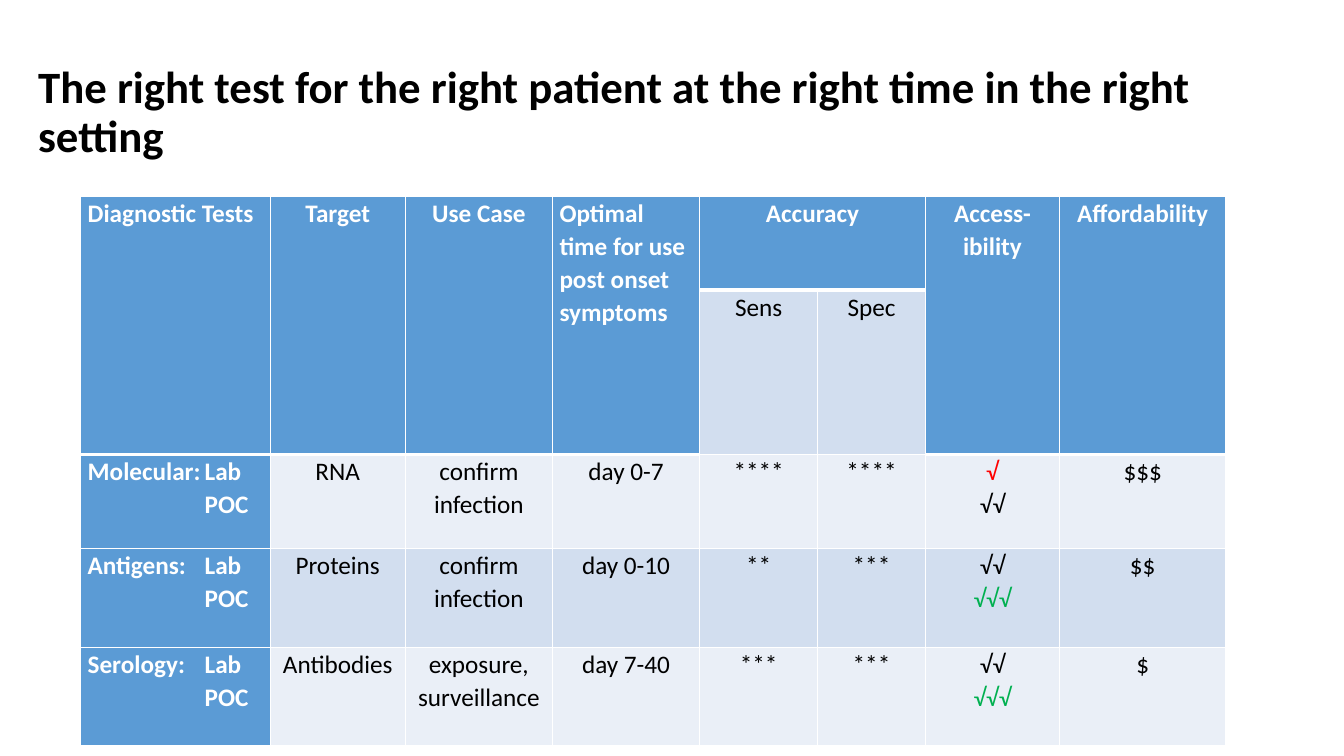
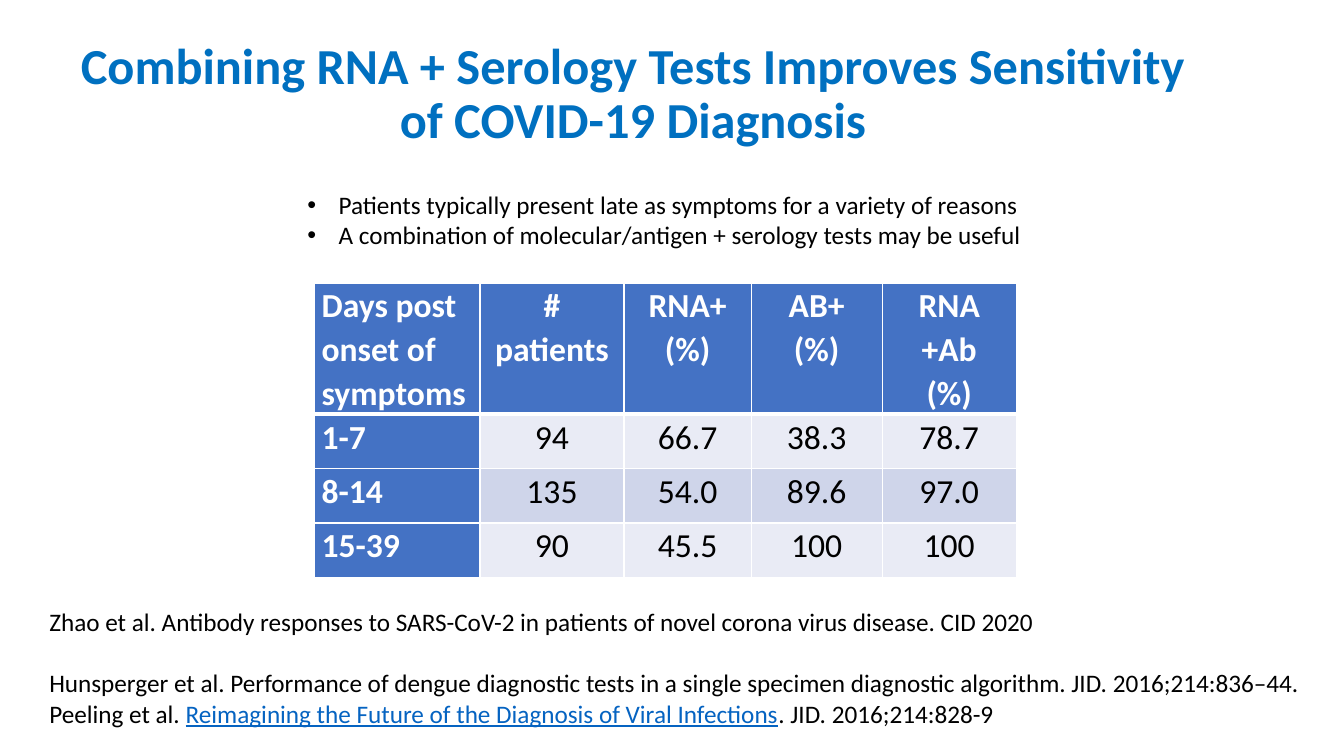
import pptx
import pptx.util
import pptx.dml.color
import pptx.enum.text
import pptx.oxml.ns
import lxml.etree

Inches = pptx.util.Inches
Pt = pptx.util.Pt
ALIGN = pptx.enum.text.PP_ALIGN
FONT = "Calibri"
HUE = {"black": "000000", "white": "FFFFFF", "title": "0070C0", "link": "0563C1",
       "red": "FF0000", "green": "00B050"}
SKY = {"head": "5B9BD5", "bands": ("D2DEEF", "EAEFF7")}
NAVY = {"head": "4472C4", "bands": ("E9EBF5", "CFD5EA")}
MARKS = {"√": "red", "√√√": "green"}

TESTS = [
    ["Diagnostic Tests", "Target", "Use Case", "Optimal time for use\npost onset symptoms",
     "Accuracy", "", "Access-\nibility", "Affordability"],
    ["", "", "", "", "Sens", "Spec", "", ""],
    ["Molecular:\tLab\n\tPOC", "RNA", "confirm\ninfection", "day 0-7",
     "****", "****", "√\n√√", "$$$"],
    ["Antigens:\tLab\n\tPOC", "Proteins", "confirm infection", "day 0-10",
     "**", "***", "√√\n√√√", "$$"],
    ["Serology:\tLab\n\tPOC", "Antibodies", "exposure,\nsurveillance", "day 7-40",
     "***", "***", "√√\n√√√", "$"],
]
SPANS = [(0, col, 1, col) for col in (0, 1, 2, 3, 6, 7)] + [(0, 4, 0, 5)]
DAYS = [
    ["Days post onset of symptoms", "# patients", "RNA+ (%)", "AB+\n(%)", "RNA +Ab\n(%)"],
    ["1-7", "94", "66.7", "38.3", "78.7"],
    ["8-14", "135", "54.0", "89.6", "97.0"],
    ["15-39", "90", "45.5", "100", "100"],
]
NOTES = ["Patients typically present late as symptoms for a variety of reasons",
         "A combination of molecular/antigen + serology tests may be useful"]
CITES = [
    "Zhao et al. Antibody responses to SARS-CoV-2 in patients of novel corona virus disease. CID 2020",
    "Hunsperger et al. Performance of dengue diagnostic tests in a single specimen "
    "diagnostic algorithm. JID. 2016;214:836–44.",
    "Peeling et al. ",
]
LINK = "Reimagining the Future of the Diagnosis of Viral Infections"


def rgb(code):
    """Turn a hex string into a colour."""
    return pptx.dml.color.RGBColor.from_string(code)


def node(top, tag, **attrs):
    """Append a drawing element to a parent."""
    return lxml.etree.SubElement(top, pptx.oxml.ns.qn("a:" + tag), attrs)


def style(para, size, hue="black", bold=False, align=ALIGN.LEFT, space=None):
    """Set the font and layout of a paragraph."""
    para.alignment = align
    if space:
        para.line_spacing = space
    font = para.font
    font.name, font.size, font.bold = FONT, Pt(size), bold
    font.color.rgb = rgb(HUE[hue])


def write(slide, box, text):
    """Add a wrapped text box and return its frame."""
    frame = slide.shapes.add_textbox(*map(Inches, box)).text_frame
    frame.word_wrap = True
    frame.text = text
    return frame


def title(slide, box, text, size, hue, align):
    """Add the slide title."""
    frame = write(slide, box, text)
    frame.vertical_anchor = pptx.enum.text.MSO_ANCHOR.MIDDLE
    style(frame.paragraphs[0], size, hue, True, align, 0.9)


def edge(cell, widths):
    """Draw white borders with the given widths in points."""
    props = cell._tc.get_or_add_tcPr()
    for side, width in widths.items():
        line = node(props, "ln" + side, w=str(Pt(width)))
        node(node(line, "solidFill"), "srgbClr", val=HUE["white"])


def fill(cell, text, size, hue, bold, align, tab):
    """Put styled text into a table cell."""
    cell.margin_left = cell.margin_right = Inches(0.07)
    cell.margin_top = cell.margin_bottom = 0
    cell.text = text
    for para in cell.text_frame.paragraphs:
        if "\t" in para.text:
            stops = node(para._p.get_or_add_pPr(), "tabLst")
            node(stops, "tab", pos=str(Inches(tab)), algn="l")
        style(para, size, MARKS.get(para.text, hue), bold, align, 1.07)


def grid(slide, spot, cols, rows, data, look, size, spans=(), left=(0,), tab=1.16):
    """Add a table with a dark head and first column over banded rows."""
    box = (*spot, sum(cols), sum(rows))
    table = slide.shapes.add_table(len(rows), len(cols), *map(Inches, box)).table
    table.first_row = table.horz_banding = False
    for col, width in zip(table.columns, cols):
        col.width = Inches(width)
    for row, height in zip(table.rows, rows):
        row.height = Inches(height)
    for top, start, end, stop in spans:
        table.cell(top, start).merge(table.cell(end, stop))
    above = [False] * len(cols)
    for r, line in enumerate(data):
        for c, text in enumerate(line):
            cell = table.cell(r, c)
            head = r == 0 or cell.is_spanned
            dark = head or c == 0
            edge(cell, {"L": 1, "R": 1, "T": 3 if above[c] else 1, "B": 3 if head else 1})
            cell.fill.solid()
            cell.fill.fore_color.rgb = rgb(look["head"] if dark else look["bands"][(r + 1) % 2])
            side = ALIGN.LEFT if c == 0 or (head and c in left) else ALIGN.CENTER
            fill(cell, text, size, "white" if dark else "black", dark, side, tab)
            above[c] = head


def notes(slide, box):
    """Add the bulleted notes."""
    frame = write(slide, box, "\n".join(NOTES))
    for para in frame.paragraphs:
        props = para._p.get_or_add_pPr()
        props.set("marL", str(Inches(0.31)))
        props.set("indent", str(-Inches(0.31)))
        node(props, "buFont", typeface="Arial")
        node(props, "buChar", char="•")
        style(para, 18)


def cites(slide, box):
    """Add the list of references."""
    paras = write(slide, box, "\n".join(CITES)).paragraphs
    for para in paras:
        style(para, 18)
    paras[1].space_before = Pt(22)
    link = paras[2].add_run()
    link.text = LINK
    link.font.underline = True
    link.font.color.rgb = rgb(HUE["link"])
    paras[2].add_run().text = ". JID. 2016;214:828-9"


def choice(slide):
    """Build the slide that compares the tests."""
    title(slide, (0.28, 0.4, 12.9, 1.45),
          "The right test for the right patient at the right time in the right setting",
          32, "black", ALIGN.LEFT)
    grid(slide, (0.8, 1.95), (1.88, 1.34, 1.46, 1.46, 1.17, 1.07, 1.33, 1.65),
         (0.93, 1.63, 0.93, 0.98, 0.98), TESTS, SKY, 18, SPANS, (0, 3))


def gain(slide):
    """Build the slide on combined tests."""
    title(slide, (0.53, 0.22, 11.5, 1.45),
          "Combining RNA + Serology Tests Improves Sensitivity of COVID-19 Diagnosis",
          36, "title", ALIGN.CENTER)
    grid(slide, (3.12, 2.81), (1.64, 1.43, 1.26, 1.3, 1.33),
         (1.3, 0.54, 0.54, 0.54), DAYS, NAVY, 24)
    cites(slide, (0.39, 5.97, 12.81, 1.31))
    notes(slide, (2.95, 1.83, 7.42, 0.71))


def main():
    """Build and save the deck."""
    deck = pptx.Presentation()
    deck.slide_width, deck.slide_height = Inches(13.33), Inches(7.5)
    for build in (choice, gain):
        build(deck.slides.add_slide(deck.slide_layouts[6]))
    deck.save("out.pptx")


if __name__ == "__main__":
    main()
